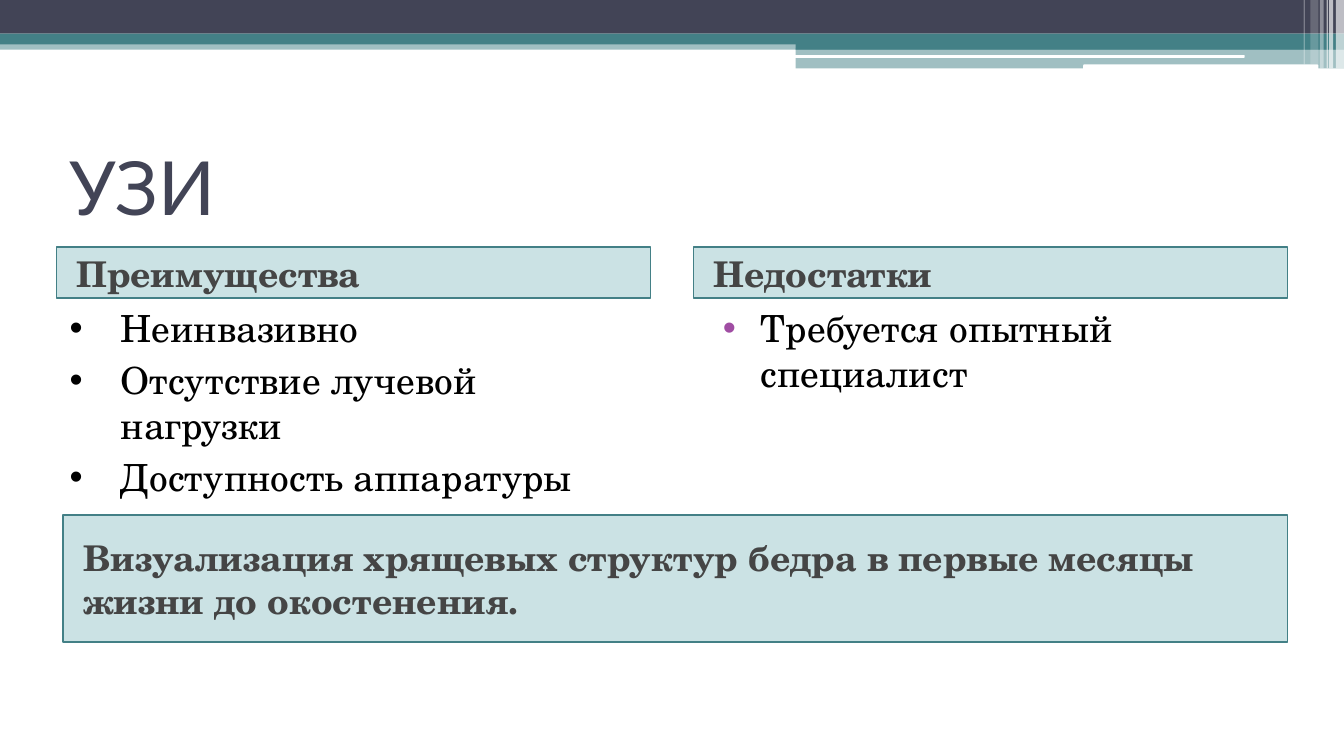
"""Build a slide that weighs the pros and cons of ultrasound."""
from lxml.etree import SubElement
from pptx import Presentation
from pptx.dml.color import RGBColor
from pptx.enum.shapes import MSO_SHAPE
from pptx.enum.text import MSO_ANCHOR, PP_ALIGN
from pptx.oxml.ns import qn
from pptx.util import Inches, Pt

NAVY = RGBColor(0x42, 0x44, 0x56)
TEAL = RGBColor(0x43, 0x80, 0x86)
AQUA = RGBColor(0x32, 0x8E, 0x97)
GRAY = RGBColor(0x45, 0x45, 0x45)
PURPLE = RGBColor(0xA0, 0x4D, 0xA3)
BLACK = RGBColor(0, 0, 0)
WHITE = RGBColor(255, 255, 255)
SERIF = "TeX Gyre Schola"

TITLE = "УЗИ"
COLUMNS = [
    dict(head="Преимущества",
         items=["Неинвазивно", "Отсутствие лучевой нагрузки", "Доступность аппаратуры"],
         style=dict(left=0.38, hang=0.38, before=4, bullet=BLACK)),
    dict(head="Недостатки",
         items=["Требуется опытный специалист"],
         style=dict(left=0.4, hang=0.28, before=3, bullet=PURPLE)),
]
NOTE = "Визуализация хрящевых структур бедра в первые месяцы жизни до окостенения."

BANDS = [
    (0, 0.3, 10, 0.07, TEAL, 50),
    (0, 0, 10, 0.25, NAVY, 100),
    (0, 0.25, 10, 0.08, TEAL, 100),
    (5.92, 0.3, 4.08, 0.07, TEAL, 100),
    (5.92, 0.36, 4.08, 0.15, TEAL, 50),
]
GAPS = [(5.91, 0.41, 3.35, 0.02), (8.06, 0.48, 1.75, 0.04)]
STRIPES = [
    (9.94, 0.06, 0.51, 65),
    (9.89, 0.03, 0.51, 65),
    (9.87, 0.01, 0.51, 60),
    (9.82, 0.03, 0.51, 40),
    (9.75, 0.06, 0.48, 20),
    (9.7, 0.01, 0.48, 30),
]
LEFT, WIDTH, STEP = 0.42, 4.42, 4.74
HEAD_TOP, HEAD_HIGH, LIST_HIGH = 1.84, 0.38, 3.19


def add_box(slide, x, y, w, h, color, alpha=100, kind=MSO_SHAPE.RECTANGLE, edge=None):
    box = slide.shapes.add_shape(kind, Inches(x), Inches(y), Inches(w), Inches(h))
    box.shadow.inherit = False
    box.fill.solid()
    box.fill.fore_color.rgb = color
    if alpha < 100:
        tint = box.element.spPr.find(qn("a:solidFill"))[0]
        SubElement(tint, qn("a:alpha"), val=str(alpha * 1000))
    if edge is None:
        box.line.fill.background()
    else:
        box.line.color.rgb = edge
        box.line.width = Pt(1)
    return box


def put_text(shape, lines, size=20, font=SERIF, color=BLACK, bold=False,
             anchor=MSO_ANCHOR.TOP, left=0, hang=0, before=0, bullet=None):
    frame = shape.text_frame
    frame.word_wrap = True
    frame.vertical_anchor = anchor
    frame.text = "\n".join(lines)
    for para in frame.paragraphs:
        para.alignment = PP_ALIGN.LEFT
        para.space_before = Pt(before)
        for run in para.runs:
            run.font.size = Pt(size)
            run.font.name = font
            run.font.bold = bold
            run.font.color.rgb = color
        props = para._p.get_or_add_pPr()
        props.set("marL", str(Inches(left)))
        props.set("indent", str(-Inches(hang)))
        if bullet is not None:
            mark = SubElement(props, qn("a:buClr"))
            SubElement(mark, qn("a:srgbClr"), val=str(bullet))
            SubElement(props, qn("a:buFont"), typeface="Arial")
            SubElement(props, qn("a:buChar"), char="•")


def add_panel(slide, text, x, y, w, h):
    panel = add_box(slide, x, y, w, h, AQUA, 25, edge=TEAL)
    put_text(panel, [text], size=19, color=GRAY, bold=True,
             anchor=MSO_ANCHOR.MIDDLE, left=0.05, before=3)


def main():
    deck = Presentation()
    deck.slide_width = Inches(10)
    deck.slide_height = Inches(10) * 9 // 16
    slide = deck.slides.add_slide(deck.slide_layouts[5])

    for band in BANDS:
        add_box(slide, *band)
    for gap in GAPS:
        add_box(slide, *gap, WHITE, kind=MSO_SHAPE.ROUNDED_RECTANGLE)
    for x, wide, high, alpha in STRIPES:
        add_box(slide, x, 0, wide, high, WHITE, alpha)

    title = slide.shapes.title
    title.left, title.top = Inches(LEFT), Inches(0.94)
    title.width, title.height = Inches(9.17), Inches(0.88)
    put_text(title, [TITLE], size=40, font="Lato", color=NAVY, anchor=MSO_ANCHOR.MIDDLE)

    for i, col in enumerate(COLUMNS):
        x = LEFT + i * STEP
        add_panel(slide, col["head"], x, HEAD_TOP, WIDTH, HEAD_HIGH)
        area = slide.shapes.add_textbox(Inches(x), Inches(HEAD_TOP + HEAD_HIGH),
                                        Inches(WIDTH), Inches(LIST_HIGH))
        put_text(area, col["items"], **col["style"])

    add_panel(slide, NOTE, 0.47, 3.83, 9.11, 0.95)
    deck.save("out.pptx")


if __name__ == "__main__":
    main()
